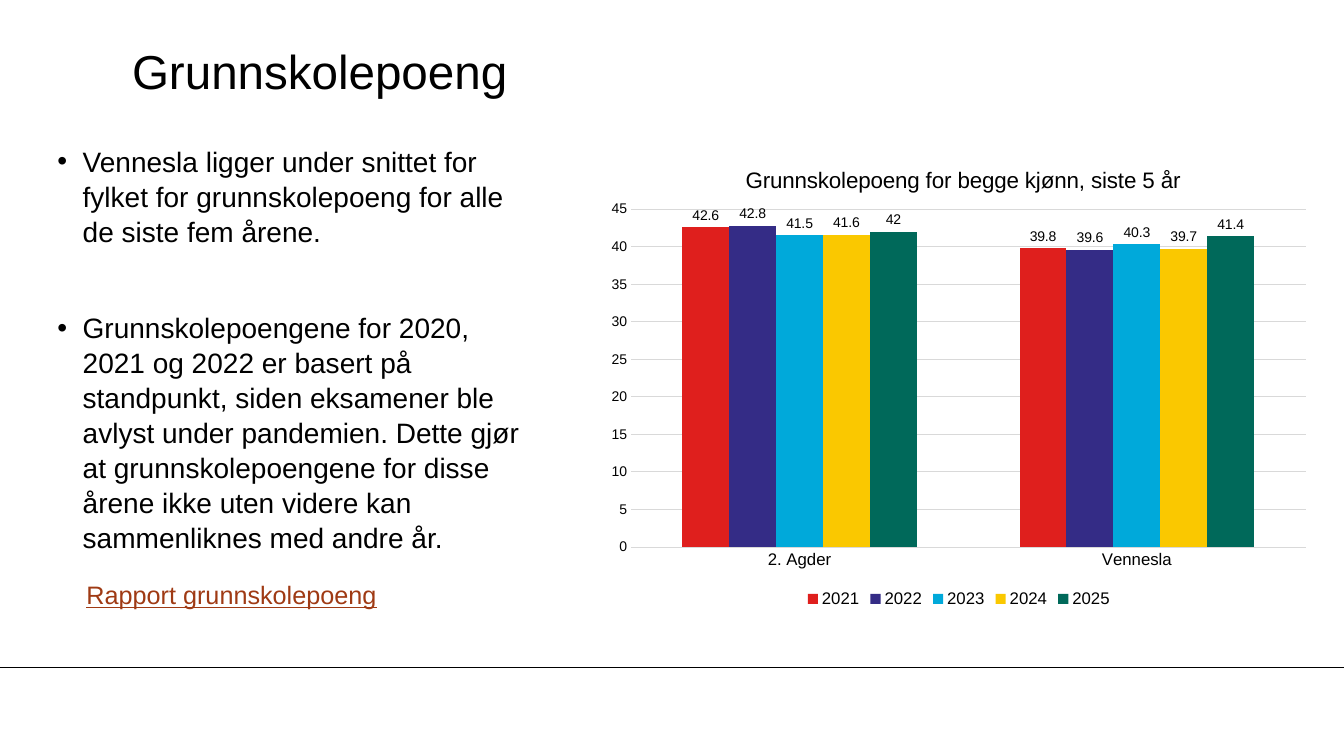
"""Build the slide on Grunnskolepoeng with its bullets and column chart."""
from dataclasses import dataclass

from lxml import etree
from pptx import Presentation
from pptx.chart.data import CategoryChartData
from pptx.dml.color import RGBColor
from pptx.enum.chart import XL_CHART_TYPE, XL_LABEL_POSITION, XL_LEGEND_POSITION, XL_TICK_MARK
from pptx.enum.shapes import MSO_CONNECTOR
from pptx.enum.text import MSO_ANCHOR, MSO_AUTO_SIZE, PP_ALIGN
from pptx.oxml.ns import qn
from pptx.util import Inches, Pt

CLUSTERED = XL_CHART_TYPE.COLUMN_CLUSTERED
OUTSIDE = XL_LABEL_POSITION.OUTSIDE_END
BOTTOM = XL_LEGEND_POSITION.BOTTOM
NO_TICK = XL_TICK_MARK.NONE
STRAIGHT = MSO_CONNECTOR.STRAIGHT
MIDDLE = MSO_ANCHOR.MIDDLE
LEFT = PP_ALIGN.LEFT
NO_FIT = MSO_AUTO_SIZE.NONE


@dataclass(frozen=True)
class Theme:
    font: str = "Arial"
    text: str = "000000"
    link: str = "9F3A14"
    grid: str = "D9D9D9"
    series: tuple = ("DF1F1D", "342C86", "00A9DA", "FAC800", "00695A")
    title: int = 34
    body: int = 20
    link_size: int = 18
    chart_title: int = 16
    category: int = 12
    value: int = 10
    line: float = 0.75


theme = Theme()


def set_font(font, size, color=theme.text):
    font.name = theme.font
    font.size = Pt(size)
    font.bold = False
    font.color.rgb = RGBColor.from_string(color)


def place(element, index, **shares):
    for layout in element.findall(qn("c:layout")):
        element.remove(layout)
    layout = etree.Element(qn("c:layout"))
    manual = etree.SubElement(layout, qn("c:manualLayout"))
    for name, value in shares.items():
        etree.SubElement(manual, qn(f"c:{name}")).set("val", str(value))
    element.insert(index, layout)


presentation = Presentation()
presentation.slide_width = Inches(13.33)
presentation.slide_height = Inches(7.5)
slide = presentation.slides.add_slide(presentation.slide_layouts[5])

footer_line = slide.shapes.add_connector(
    STRAIGHT, 0, Inches(6.62), presentation.slide_width, Inches(6.62))
footer_line.line.color.rgb = RGBColor.from_string(theme.text)
footer_line.line.width = Pt(theme.line)
etree.SubElement(footer_line.element.spPr, qn("a:effectLst"))

title = slide.shapes.title
title.left, title.top, title.width, title.height = map(Inches, (1.31, 0.32, 11.1, 0.75))
bullet_box = slide.shapes.add_textbox(*map(Inches, (0.57, 1.42, 4.72, 4.02)))
for shape in (title, bullet_box):
    frame = shape.text_frame
    frame.word_wrap = True
    frame.auto_size = NO_FIT
    frame.margin_left = frame.margin_top = frame.margin_right = frame.margin_bottom = 0

title.text_frame.text = "Grunnskolepoeng"
title.text_frame.vertical_anchor = MIDDLE
title.text_frame.paragraphs[0].alignment = LEFT
set_font(title.text_frame.paragraphs[0].font, theme.title)

bullet_box.text_frame.text = "\n".join((
    "Vennesla ligger under snittet for fylket for grunnskolepoeng for alle de siste fem årene.",
    "Grunnskolepoengene for 2020, 2021 og 2022 er basert på standpunkt, siden eksamener ble "
    "avlyst under pandemien. Dette gjør at grunnskolepoengene for disse årene ikke uten videre "
    "kan sammenliknes med andre år.",
))
for number, paragraph in enumerate(bullet_box.text_frame.paragraphs):
    properties = paragraph._p.get_or_add_pPr()
    properties.set("marL", str(Inches(0.25)))
    properties.set("indent", str(-Inches(0.25)))
    etree.SubElement(properties, qn("a:buFont")).set("typeface", theme.font)
    etree.SubElement(properties, qn("a:buChar")).set("char", "•")
    paragraph.line_spacing = 1.04
    paragraph.space_before = Pt(44 * number)
    set_font(paragraph.font, theme.body)

link_box = slide.shapes.add_textbox(*map(Inches, (0.76, 5.7, 3.3, 0.4)))
link_box.text_frame.word_wrap = True
link_box.text_frame.text = "Rapport grunnskolepoeng"
link_font = link_box.text_frame.paragraphs[0].font
set_font(link_font, theme.link_size, theme.link)
link_font.underline = True

chart_data = CategoryChartData()
chart_data.categories = ["2. Agder", "Vennesla"]
for year, points in (
    ("2021", (42.6, 39.8)),
    ("2022", (42.8, 39.6)),
    ("2023", (41.5, 40.3)),
    ("2024", (41.6, 39.7)),
    ("2025", (42, 41.4)),
):
    chart_data.add_series(year, points)
chart = slide.shapes.add_chart(
    CLUSTERED, *map(Inches, (5.92, 1.42, 7.18, 4.65)), chart_data).chart
set_font(chart.font, theme.value)

chart.has_title = True
chart.chart_title.include_in_layout = False
chart.chart_title.text_frame.text = "Grunnskolepoeng for begge kjønn, siste 5 år"
set_font(chart.chart_title.text_frame.paragraphs[0].font, theme.chart_title)
place(chart.chart_title.element, 1, xMode="edge", yMode="edge", x=0.2, y=0.04)
place(chart.element.chart.plotArea, 0, layoutTarget="inner", xMode="edge", yMode="edge",
      x=0.047, y=0.141, w=0.932, h=0.721)

chart.has_legend = True
chart.legend.position = BOTTOM
chart.legend.include_in_layout = False
set_font(chart.legend.font, theme.category)

category_axis, value_axis = chart.category_axis, chart.value_axis
for axis, size in ((category_axis, theme.category), (value_axis, theme.value)):
    axis.major_tick_mark = axis.minor_tick_mark = NO_TICK
    set_font(axis.tick_labels.font, size)
value_axis.minimum_scale = 0
value_axis.maximum_scale = 45
value_axis.major_unit = 5
value_axis.format.line.fill.background()
for line in (category_axis.format.line, value_axis.major_gridlines.format.line):
    line.color.rgb = RGBColor.from_string(theme.grid)
    line.width = Pt(theme.line)

plot = chart.plots[0]
plot.gap_width = 219
plot.overlap = 0
plot.vary_by_categories = False
for series, color in zip(plot.series, theme.series):
    series.format.fill.solid()
    series.format.fill.fore_color.rgb = RGBColor.from_string(color)
    labels = series.data_labels
    labels.show_value = True
    labels.position = OUTSIDE
    set_font(labels.font, theme.value)

presentation.save("out.pptx")
